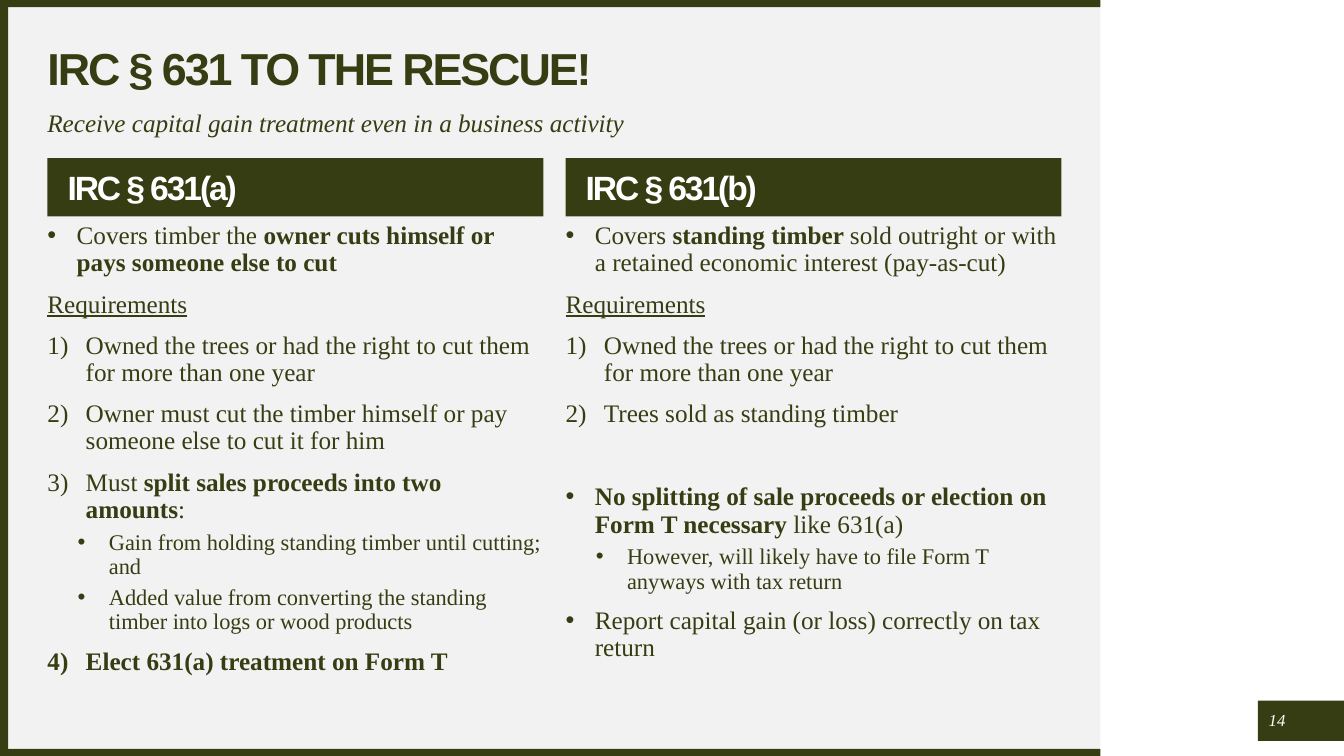
import pptx
import pptx.dml.color
import pptx.enum.shapes
import pptx.enum.text
import pptx.oxml.ns
import pptx.util
from lxml import etree

WIDE, HIGH = 13.33, 7.5
DARK, PALE, WHITE = "373D12", "F2F2F2", "FFFFFF"
SANS, SERIF = "Arial", "Times New Roman"
LEFT, COL, GAP = 3.53, 36.9, 1.65
PANEL = 81.88
EDGE = 0.95

KINDS = {
    "dot": (0, 0.29, 0.29, 18, 10),
    "num": (0, 0.38, 0.38, 18, 10),
    "sub": (1, 0.61, 0.31, 16, 5),
    "head": (0, 0, 0, 18, 10),
    "apart": (0, 0.29, 0.29, 18, 40),
}

CUT = [
    ("dot", "Covers timber the *owner cuts himself or pays someone else to cut*"),
    ("head", "Requirements"),
    ("num", "Owned the trees or had the right to cut them for more than one year"),
    ("num", "Owner must cut the timber himself or pay someone else to cut it for him"),
    ("num", "Must *split sales proceeds into two amounts*:"),
    ("sub", "Gain from holding standing timber until cutting; and"),
    ("sub", "Added value from converting the standing timber into logs or wood products"),
    ("num", "*Elect 631(a) treatment on Form T*"),
]
SOLD = [
    ("dot", "Covers *standing timber *sold outright or with a retained economic interest (pay-as-cut)"),
    ("head", "Requirements"),
    ("num", "Owned the trees or had the right to cut them for more than one year"),
    ("num", "Trees sold as standing timber"),
    ("apart", "*No splitting of sale proceeds or election on Form T necessary* like 631(a)"),
    ("sub", "However, will likely have to file Form T anyways with tax return"),
    ("dot", "Report capital gain (or loss) correctly on tax return"),
]


def paint(item, hue):
    """Set a fill or font colour from a hex string."""
    if hasattr(item, "solid"):
        item.solid()
        item = item.fore_color
    else:
        item = item.color
    item.rgb = pptx.dml.color.RGBColor.from_string(hue)


def scale(box):
    """Turn a box in percent of the slide into lengths."""
    sides = (WIDE, HIGH, WIDE, HIGH)
    return [pptx.util.Inches(part * side / 100) for part, side in zip(box, sides)]


def place(shape, box):
    """Move a shape to its box."""
    shape.left, shape.top, shape.width, shape.height = scale(box)


def block(slide, box, hue):
    """Draw a plain filled rectangle."""
    kind = pptx.enum.shapes.MSO_SHAPE.RECTANGLE
    shape = slide.shapes.add_shape(kind, *scale(box))
    shape.shadow.inherit = False
    paint(shape.fill, hue)
    shape.line.fill.background()


def setup(shape, middle=False, pad=(0, 0)):
    """Set the frame's margins, wrap and anchor."""
    frame = shape.text_frame
    frame.word_wrap = True
    frame.auto_size = pptx.enum.text.MSO_AUTO_SIZE.NONE
    frame.margin_left, frame.margin_top = map(pptx.util.Inches, pad)
    frame.margin_right = frame.margin_bottom = 0
    anchor = pptx.enum.text.MSO_ANCHOR
    frame.vertical_anchor = anchor.MIDDLE if middle else anchor.TOP
    return frame


def write(para, text, size, face=SERIF, hue=DARK, bold=False, ital=False, line=False, tight=0):
    """Add one formatted run."""
    run = para.add_run()
    run.text = text
    font = run.font
    font.size, font.name = pptx.util.Pt(size), face
    font.bold, font.italic, font.underline = bold, ital, line
    paint(font, hue)
    if tight:
        font._element.set("spc", str(tight))


def space(para, before=0):
    """Set the line and paragraph spacing."""
    para.alignment = pptx.enum.text.PP_ALIGN.LEFT
    para.line_spacing = 0.9
    para.space_before = pptx.util.Pt(before)
    para.space_after = pptx.util.Pt(0)


def mark(para, kind, left, hang):
    """Set the indent and the bullet or number."""
    props = para._p.get_or_add_pPr()
    props.set("marL", str(pptx.util.Inches(left)))
    props.set("indent", str(-pptx.util.Inches(hang)))
    name = pptx.oxml.ns.qn
    if kind == "num":
        etree.SubElement(props, name("a:buFont"), typeface="+mj-lt")
        etree.SubElement(props, name("a:buAutoNum"), type="arabicParenR")
    elif kind == "head":
        etree.SubElement(props, name("a:buNone"))
    else:
        etree.SubElement(props, name("a:buFont"), typeface=SANS)
        etree.SubElement(props, name("a:buChar"), char="•")


def label(shape, box, text, size, middle=True, pad=(0, 0), **look):
    """Fill a box with one line of text."""
    place(shape, box)
    para = setup(shape, middle, pad).paragraphs[0]
    mark(para, "head", 0, 0)
    space(para)
    write(para, text, size, **look)
    return para


def items(shape, box, rows):
    """Fill a box with a list; asterisks enclose bold words."""
    place(shape, box)
    frame = setup(shape)
    for pos, (kind, text) in enumerate(rows):
        para = frame.add_paragraph() if pos else frame.paragraphs[0]
        level, left, hang, size, before = KINDS[kind]
        para.level = level
        mark(para, kind, left, hang)
        space(para, before if pos else 0)
        for turn, part in enumerate(text.split("*")):
            if part:
                write(para, part, size, bold=turn % 2 == 1, line=kind == "head")


def column(head, body, box, name, rows):
    """Place a heading bar and the list under it."""
    left, top, width, height = box
    bar = 7.7
    label(head, (left, top, width, bar), name, 24, pad=(0.2, 0.04),
          face=SANS, hue=WHITE, bold=True, tight=-150)
    paint(head.fill, DARK)
    drop = bar + 0.84
    items(body, (left, top + drop, width, height - drop), rows)


def border(slide, box):
    """Draw the pale panel and its dark edges."""
    left, top, width, height = box
    block(slide, (left + 0.6, top + EDGE, width - 0.6, height - 2 * EDGE), PALE)
    for edge in (top, top + height - EDGE):
        block(slide, (left, edge, width, EDGE), DARK)
    block(slide, (left, top, 0.6, height), DARK)


def number(slide, box, text):
    """Draw the page number on its tab."""
    left, top, width, height = box
    block(slide, box, DARK)
    inner = (left + 0.3, top + 0.67, 2.25, 4)
    note = slide.shapes.add_textbox(*scale(inner))
    para = label(note, inner, text, 12, hue=WHITE, ital=True)
    para.alignment = pptx.enum.text.PP_ALIGN.CENTER


def main():
    """Build and save the slide."""
    deck = pptx.Presentation()
    deck.slide_width, deck.slide_height = map(pptx.util.Inches, (WIDE, HIGH))
    slide = deck.slides.add_slide(deck.slide_layouts[4])
    title, *parts = list(slide.placeholders)
    border(slide, (0, 0, PANEL, 100))
    number(slide, (93.6, 92.67, 6.4, 5.33), "14")
    for shape in (title, *parts):
        slide.shapes._spTree.append(shape.element)
    full = 2 * COL + GAP
    label(title, (LEFT, 6.27, full, 6.27), "IRC § 631 TO THE RESCUE!", 32,
          face=SANS, bold=True, tight=-150)
    box = (LEFT, 14.67, full, 5.2)
    note = slide.shapes.add_textbox(*scale(box))
    label(note, box, "Receive capital gain treatment even in a business activity",
          18, middle=False, ital=True)
    sides = (("IRC § 631(a)", CUT), ("IRC § 631(b)", SOLD))
    for pos, (name, rows) in enumerate(sides):
        head, body = parts[2 * pos:2 * pos + 2]
        column(head, body, (LEFT + pos * (COL + GAP), 20.93, COL, 69.34), name, rows)
    deck.save("out.pptx")


if __name__ == "__main__":
    main()
